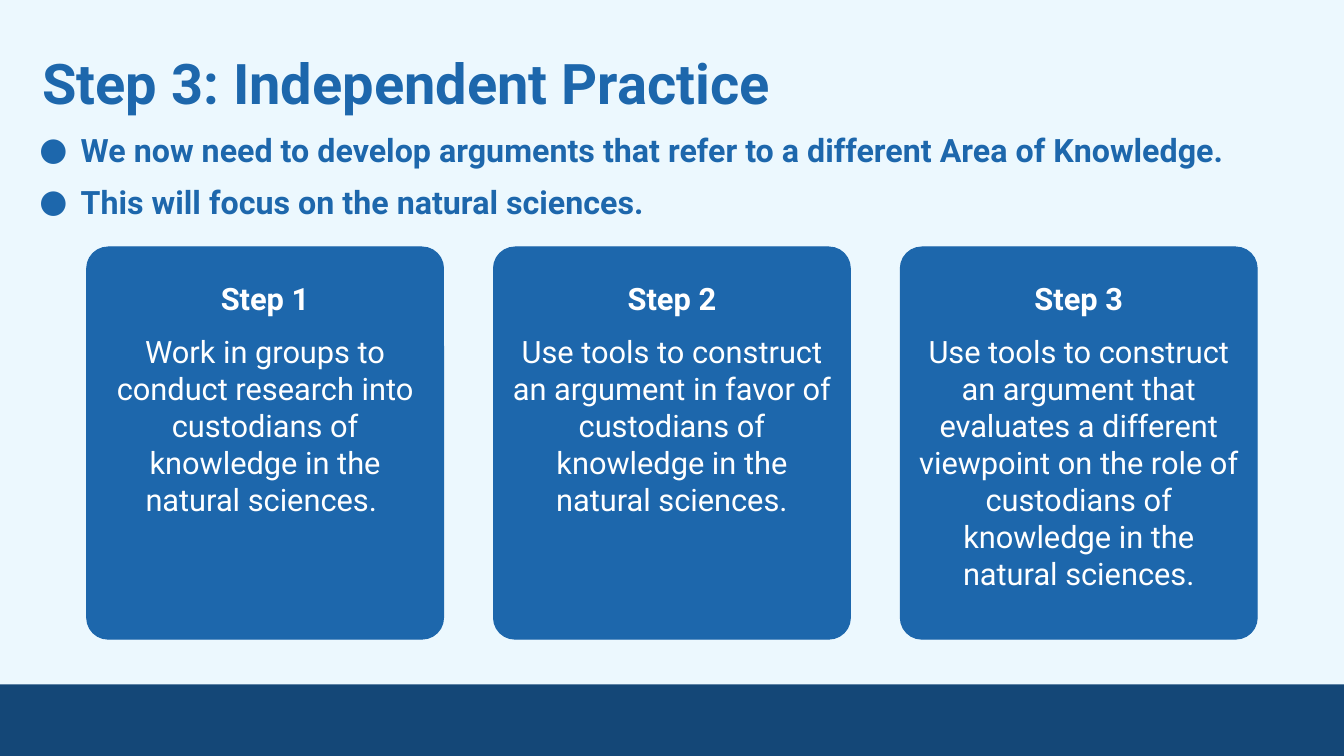
from dataclasses import dataclass

from lxml import etree
from pptx import Presentation
from pptx.dml.color import RGBColor
from pptx.enum.shapes import MSO_SHAPE
from pptx.enum.text import MSO_ANCHOR, PP_ALIGN
from pptx.oxml.ns import qn
from pptx.util import Emu, Inches, Pt

RECT = MSO_SHAPE.RECTANGLE
ROUND = MSO_SHAPE.ROUNDED_RECTANGLE
TOP = MSO_ANCHOR.TOP
LEFT = PP_ALIGN.LEFT
MID = PP_ALIGN.CENTER

WIDE = Inches(13.33)
HIGH = Inches(7.5)
FONT = "Roboto"
PALE, BLUE, NAVY, WHITE = "ECF8FE", "1D67AC", "144777", "FFFFFF"


@dataclass
class Box:
    """Left, top, width and height in percent of the slide."""
    x: float
    y: float
    w: float
    h: float

    def emu(self) -> tuple:
        return (Emu(int(WIDE * self.x / 100)), Emu(int(HIGH * self.y / 100)),
                Emu(int(WIDE * self.w / 100)), Emu(int(HIGH * self.h / 100)))


@dataclass
class Card:
    head: str
    body: str


@dataclass
class Style:
    size: float
    color: str
    bold: bool = False
    align: int = LEFT


CARDS = [
    Card("Step 1", "Work in groups to conduct research into custodians of "
         "knowledge in the natural sciences. "),
    Card("Step 2", "Use tools to construct an argument in favor of custodians "
         "of knowledge in the natural sciences."),
    Card("Step 3", "Use tools to construct an argument that evaluates a "
         "different viewpoint on the role of custodians of knowledge in the "
         "natural sciences."),
]
GOALS = [
    "We now need to develop arguments that refer to a different Area of Knowledge.",
    "This will focus on the natural sciences.",
]
CARD_X, CARD_Y, CARD_W, CARD_H = 6.45, 32.67, 26.55, 51.87
STEP = 30.27
HEAD_W = 18.08


def color(code: str) -> RGBColor:
    return RGBColor.from_string(code)


def write(frame, lines: list, style: Style, pad: float) -> None:
    frame.word_wrap = True
    frame.vertical_anchor = TOP
    frame.margin_left = frame.margin_right = Inches(pad)
    frame.margin_top = frame.margin_bottom = Inches(pad)
    frame.text = "\n".join(lines)
    for para in frame.paragraphs:
        para.alignment = style.align
        for run in para.runs:
            font = run.font
            font.name, font.size, font.bold = FONT, Pt(style.size), style.bold
            font.color.rgb = color(style.color)


def label(slide, box: Box, lines: list, style: Style, pad: float):
    frame = slide.shapes.add_textbox(*box.emu()).text_frame
    write(frame, lines, style, pad)
    return frame


def block(slide, kind: int, box: Box, fill: str):
    shape = slide.shapes.add_shape(kind, *box.emu())
    shape.shadow.inherit = False
    shape.fill.solid()
    shape.fill.fore_color.rgb = color(fill)
    shape.line.color.rgb = color(fill)
    shape.line.width = Pt(0.75)
    return shape


def bullet(para) -> None:
    props = para._p.get_or_add_pPr()
    props.set("marL", str(Inches(0.5)))
    props.set("indent", str(Inches(-0.41)))
    tint = etree.SubElement(props, qn("a:buClr"))
    etree.SubElement(tint, qn("a:srgbClr"), val=BLUE)
    etree.SubElement(props, qn("a:buFont"), typeface=FONT)
    etree.SubElement(props, qn("a:buChar"), char="●")


def draw(slide, card: Card, x: float) -> None:
    shape = block(slide, ROUND, Box(x, CARD_Y, CARD_W, CARD_H), BLUE)
    shape.adjustments[0] = 0.06
    write(shape.text_frame, [card.body], Style(22, WHITE, align=MID), 0.1)
    shape.text_frame.margin_top = Inches(0.79)
    box = Box(x + (CARD_W - HEAD_W) / 2, 35.6, HEAD_W, 7.87)
    label(slide, box, [card.head], Style(22, WHITE, True, MID), 0.1)


def main() -> None:
    deck = Presentation()
    deck.slide_width, deck.slide_height = WIDE, HIGH
    slide = deck.slides.add_slide(deck.slide_layouts[6])
    slide.background.fill.solid()
    slide.background.fill.fore_color.rgb = color(PALE)

    band = block(slide, RECT, Box(0, 90.53, 100, 9.47), NAVY)
    band.line.fill.background()
    label(slide, Box(2.18, 4.67, 91.45, 12.53),
          ["Step 3: Independent Practice"], Style(40, BLUE, True), 0.13)
    goals = label(slide, Box(1.28, 15.47, 97.45, 15.73),
                  GOALS, Style(23, BLUE, True), 0.13)
    for num, para in enumerate(goals.paragraphs):
        bullet(para)
        if num:
            para.space_before = Pt(10)
    for num, card in enumerate(CARDS):
        draw(slide, card, CARD_X + num * STEP)
    deck.save("out.pptx")


if __name__ == "__main__":
    main()
